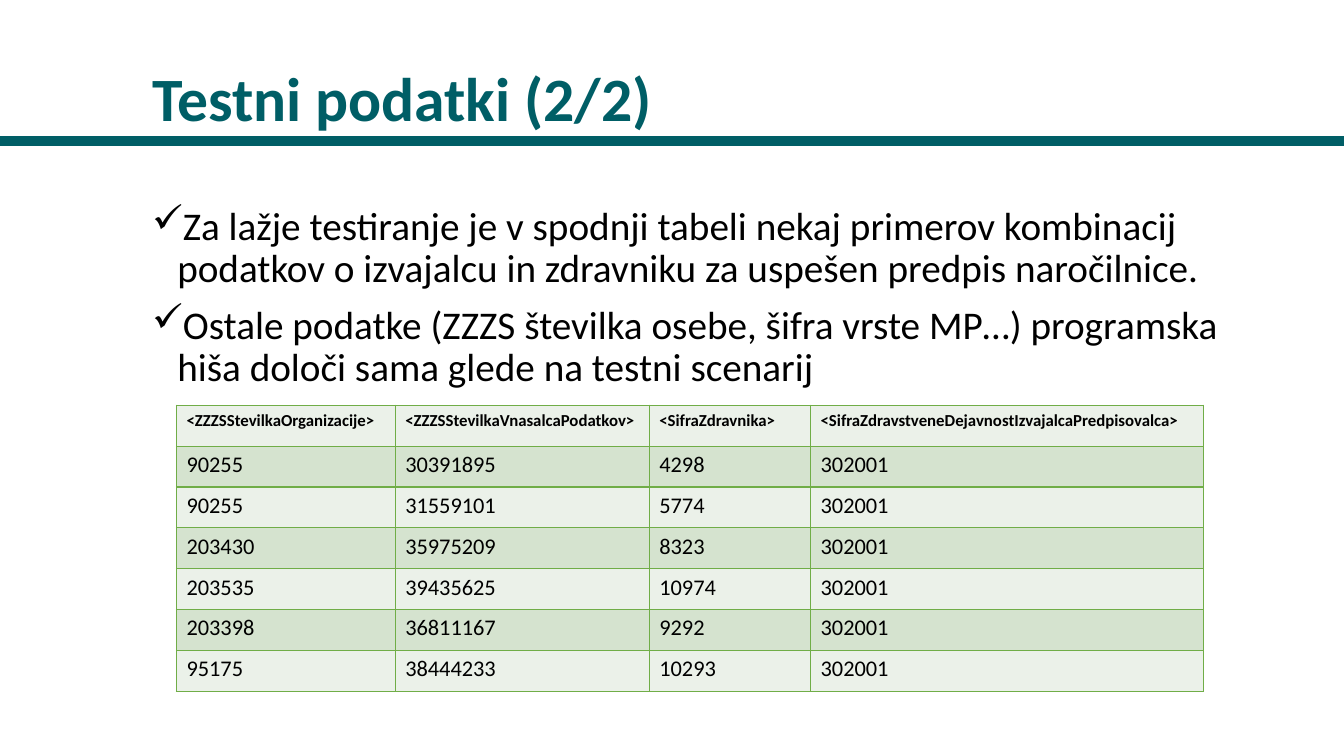
from dataclasses import dataclass

from lxml.etree import SubElement
from pptx import Presentation
from pptx.dml.color import RGBColor
from pptx.enum.shapes import MSO_CONNECTOR as Connector
from pptx.enum.text import MSO_ANCHOR as Anchor, MSO_AUTO_SIZE as AutoSize, PP_ALIGN as Align
from pptx.oxml.ns import qn
from pptx.util import Pt

EMU_PER_PX = 9144
TITLE_ONLY = 5


@dataclass(frozen=True)
class Theme:
    font: str = "Calibri"
    teal: str = "005E66"
    ink: str = "000000"
    border: str = "70AD47"
    bands: tuple = ("EBF1E9", "D5E3CF")
    title_size: int = 44
    body_size: int = 28
    cell_size: int = 16
    header_size: int = 12
    rule_width: int = 7
    border_width: int = 1
    line_spacing: float = 0.9
    bullet_gap: int = 10


def px(length):
    return length * EMU_PER_PX


class SlideBuilder:
    def __init__(self, deck, theme):
        self.theme = theme
        self.page = deck.slides.add_slide(deck.slide_layouts[TITLE_ONLY])

    def place(self, shape, left, top, width, height):
        shape.left, shape.top = px(left), px(top)
        shape.width, shape.height = px(width), px(height)

    def style(self, para, size, color, bold=False):
        for span in para.runs:
            span.font.name = self.theme.font
            span.font.size = Pt(size)
            span.font.bold = bold
            span.font.color.rgb = RGBColor.from_string(color)

    def title(self, text, *bounds):
        title = self.page.shapes.title
        self.place(title, *bounds)
        frame = title.text_frame
        frame.text = text
        frame.word_wrap = True
        frame.auto_size = AutoSize.NONE
        frame.vertical_anchor = Anchor.BOTTOM
        para = frame.paragraphs[0]
        para.alignment = Align.LEFT
        para.line_spacing = self.theme.line_spacing
        self.style(para, self.theme.title_size, self.theme.teal, bold=True)

    def rule(self, left, right, top):
        line = self.page.shapes.add_connector(
            Connector.STRAIGHT, px(left), px(top), px(right), px(top))
        line.line.color.rgb = RGBColor.from_string(self.theme.teal)
        line.line.width = Pt(self.theme.rule_width)
        SubElement(line._element.spPr, qn("a:effectLst"))

    def bullets(self, texts, indent, *bounds):
        box = self.page.shapes.add_textbox(*map(px, bounds))
        frame = box.text_frame
        frame.word_wrap = True
        frame.text = "\n".join(texts)
        for index, para in enumerate(frame.paragraphs):
            para.line_spacing = self.theme.line_spacing
            para.space_before = Pt(self.theme.bullet_gap if index else 0)
            properties = para._p.get_or_add_pPr()
            properties.set("marL", str(px(indent)))
            properties.set("indent", str(-px(indent)))
            SubElement(properties, qn("a:buChar"), char="✓")
            self.style(para, self.theme.body_size, self.theme.ink)

    def outline(self, cell):
        properties = cell._tc.get_or_add_tcPr()
        for index, side in enumerate(("lnL", "lnR", "lnT", "lnB")):
            edge = SubElement(properties, qn(f"a:{side}"), w=str(Pt(self.theme.border_width)))
            fill = SubElement(edge, qn("a:solidFill"))
            SubElement(fill, qn("a:srgbClr"), val=self.theme.border)
            properties.insert(index, edge)

    def table(self, rows, widths, left, top, height):
        frame = self.page.shapes.add_table(
            len(rows), len(widths), px(left), px(top), px(sum(widths)), px(height))
        grid = frame.table
        for column, width in zip(grid.columns, widths):
            column.width = px(width)
        for row_index, values in enumerate(rows):
            grid.rows[row_index].height = px(height) // len(rows)
            header = row_index == 0
            size = self.theme.header_size if header else self.theme.cell_size
            for column_index, value in enumerate(values):
                cell = grid.cell(row_index, column_index)
                cell.text = value
                cell.fill.solid()
                cell.fill.fore_color.rgb = RGBColor.from_string(self.theme.bands[row_index % 2])
                self.outline(cell)
                self.style(cell.text_frame.paragraphs[0], size, self.theme.ink, header)


def main():
    deck = Presentation()
    deck.slide_width, deck.slide_height = px(1333), px(750)
    slide = SlideBuilder(deck, Theme())
    slide.rule(0, 1333, 140)
    slide.title("Testni podatki (2/2)", 141, 15, 1101, 124)
    slide.bullets([
        "Za lažje testiranje je v spodnji tabeli nekaj primerov kombinacij podatkov "
        "o izvajalcu in zdravniku za uspešen predpis naročilnice.",
        "Ostale podatke (ZZZS številka osebe, šifra vrste MP…) programska hiša "
        "določi sama glede na testni scenarij",
    ], 25, 141, 200, 1101, 476)
    header = ("<ZZZSStevilkaOrganizacije>", "<ZZZSStevilkaVnasalcaPodatkov>",
              "<SifraZdravnika>", "<SifraZdravstveneDejavnostIzvajalcaPredpisovalca>")
    doctors = [
        ("90255", "30391895", "4298"),
        ("90255", "31559101", "5774"),
        ("203430", "35975209", "8323"),
        ("203535", "39435625", "10974"),
        ("203398", "36811167", "9292"),
        ("95175", "38444233", "10293"),
    ]
    activity = "302001"
    rows = [header] + [(*doctor, activity) for doctor in doctors]
    slide.table(rows, (217, 252, 160, 390), 175, 402, 284)
    deck.save("out.pptx")


if __name__ == "__main__":
    main()
